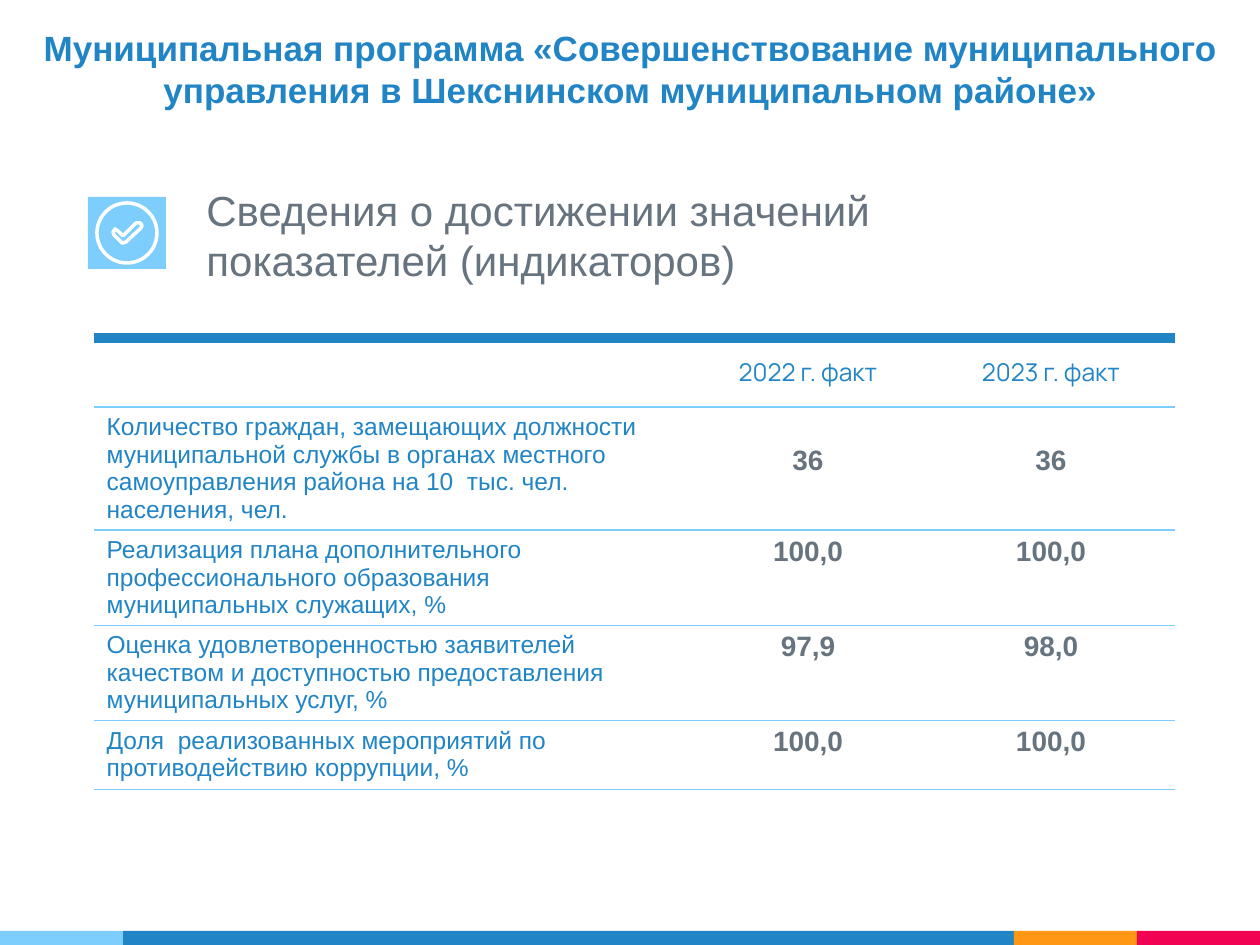
from dataclasses import dataclass

from lxml import etree
from pptx import Presentation
from pptx.dml.color import RGBColor
from pptx.enum.shapes import MSO_SHAPE
from pptx.enum.text import MSO_ANCHOR, PP_ALIGN
from pptx.oxml.ns import qn
from pptx.util import Pt

RECT, OVAL = MSO_SHAPE.RECTANGLE, MSO_SHAPE.OVAL
LEFT, CENTER = PP_ALIGN.LEFT, PP_ALIGN.CENTER
TOP, MIDDLE = MSO_ANCHOR.TOP, MSO_ANCHOR.MIDDLE
SCALE = 914400 / 126  # EMU per px


@dataclass(frozen=True)
class Theme:
    blue: str = "2185C5"
    sky: str = "7ECEFD"
    gray: str = "677480"
    gold: str = "FF9715"
    red: str = "F20253"
    white: str = "FFFFFF"
    font: str = "Arial"
    head: str = "Manrope"
    title: int = 20
    lead: int = 24
    value: int = 16
    label: int = 14
    rule: float = 0.75
    thick: float = 6
    icon: float = 2


def emu(*px):
    return [round(n * SCALE) for n in px]


class Slide:
    def __init__(self, deck, theme):
        self.theme = theme
        self.page = deck.slides.add_slide(deck.slide_layouts[6])

    def style(self, frame, text, size, color, font=None, bold=False, align=LEFT):
        frame.text = text
        para = frame.paragraphs[0]
        para.alignment = align
        for run in para.runs:
            run.font.size = Pt(size)
            run.font.name = font or self.theme.font
            run.font.bold = bold
            run.font.color.rgb = RGBColor.from_string(color)

    def text(self, box, text, size, color, anchor=TOP, **look):
        frame = self.page.shapes.add_textbox(*emu(*box)).text_frame
        frame.word_wrap = True
        frame.vertical_anchor = anchor
        self.style(frame, text, size, color, **look)

    def block(self, box, color):
        shape = self.page.shapes.add_shape(RECT, *emu(*box))
        shape.shadow.inherit = False
        shape.fill.solid()
        shape.fill.fore_color.rgb = RGBColor.from_string(color)
        shape.line.fill.background()

    def stroke(self, shape):
        shape.shadow.inherit = False
        shape.fill.background()
        shape.line.color.rgb = RGBColor.from_string(self.theme.white)
        shape.line.width = Pt(self.theme.icon)

    def ring(self, box):
        self.stroke(self.page.shapes.add_shape(OVAL, *emu(*box)))

    def outline(self, points):
        pen = self.page.shapes.build_freeform(*points[0], scale=SCALE)
        pen.add_line_segments(points[1:], close=True)
        self.stroke(pen.convert_to_shape())

    def border(self, cell, top, bottom):
        """Draw the top and bottom rules as (color, points); hide the sides."""
        props = cell._tc.get_or_add_tcPr()
        edges = {"a:lnL": None, "a:lnR": None, "a:lnT": top, "a:lnB": bottom}
        for spot, (tag, rule) in enumerate(edges.items()):
            line = etree.Element(qn(tag))
            props.insert(spot, line)
            if rule is None:
                etree.SubElement(line, qn("a:noFill"))
                continue
            color, width = rule
            line.set("w", str(Pt(width)))
            fill = etree.SubElement(line, qn("a:solidFill"))
            etree.SubElement(fill, qn("a:srgbClr")).set("val", color)

    def table(self, left, top, cols, rows, data):
        theme = self.theme
        box = emu(left, top, sum(cols), sum(rows))
        grid = self.page.shapes.add_table(len(rows), len(cols), *box).table
        grid.first_row = grid.horz_banding = False
        for col, width in zip(grid.columns, emu(*cols)):
            col.width = width
        for row, height in zip(grid.rows, emu(*rows)):
            row.height = height

        thin = (theme.sky, theme.rule)
        for r, line in enumerate(data):
            for c, text in enumerate(line):
                cell = grid.cell(r, c)
                cell.fill.background()
                self.border(cell, thin if r else (theme.blue, theme.thick), thin)
                if not text:
                    continue
                if r == 0:
                    cell.vertical_anchor = MIDDLE
                    cell.margin_top, cell.margin_bottom = emu(9, 9)
                    look = dict(size=theme.label, color=theme.blue,
                                font=theme.head, align=CENTER)
                elif c == 0:
                    look = dict(size=theme.label, color=theme.blue)
                else:
                    look = dict(size=theme.value, color=theme.gray,
                                bold=True, align=CENTER)
                self.style(cell.text_frame, text, **look)
        return grid


def main():
    deck = Presentation()
    deck.slide_width, deck.slide_height = emu(1260, 945)
    theme = Theme()
    slide = Slide(deck, theme)

    # Footer stripe
    left = 0
    for width, color in ((123, theme.sky), (891, theme.blue),
                         (123, theme.gold), (123, theme.red)):
        slide.block((left, 931, width, 14), color)
        left += width

    # Indicator table
    grid = slide.table(94, 338, (595, 238, 248), (69, 123, 95, 95, 69), (
        ("", "2022 г. факт", "2023 г. факт"),
        ("Количество граждан, замещающих должности муниципальной службы "
         "в органах местного самоуправления района на 10  тыс. чел. "
         "населения, чел.", "36", "36"),
        ("Реализация плана дополнительного профессионального образования "
         "муниципальных служащих, %", "100,0", "100,0"),
        ("Оценка удовлетворенностью заявителей качеством и доступностью "
         "предоставления муниципальных услуг, %", "97,9", "98,0"),
        ("Доля  реализованных мероприятий по противодействию коррупции, %",
         "100,0", "100,0"),
    ))
    # Values of the tallest row sit one line lower
    for c in (1, 2):
        grid.cell(1, c).margin_top = emu(38)[0]

    # Section heading
    slide.text((194, 178, 761, 115),
               "Сведения о достижении значений показателей (индикаторов)",
               theme.lead, theme.gray)

    # Check mark icon
    slide.block((88, 197, 78, 72), theme.sky)
    slide.ring((97, 203, 60, 60))
    slide.outline([(123, 243), (126, 242), (141, 228), (142, 225), (140, 223),
                   (136, 223), (123, 236), (118, 231), (115, 229), (113, 232),
                   (114, 235), (122, 243)])

    # Title
    slide.text((0, 0, 1261, 137),
               "Муниципальная программа «Совершенствование муниципального "
               "управления в Шекснинском муниципальном районе»",
               theme.title, theme.blue, anchor=MIDDLE, bold=True, align=CENTER)

    deck.save("out.pptx")


if __name__ == "__main__":
    main()
